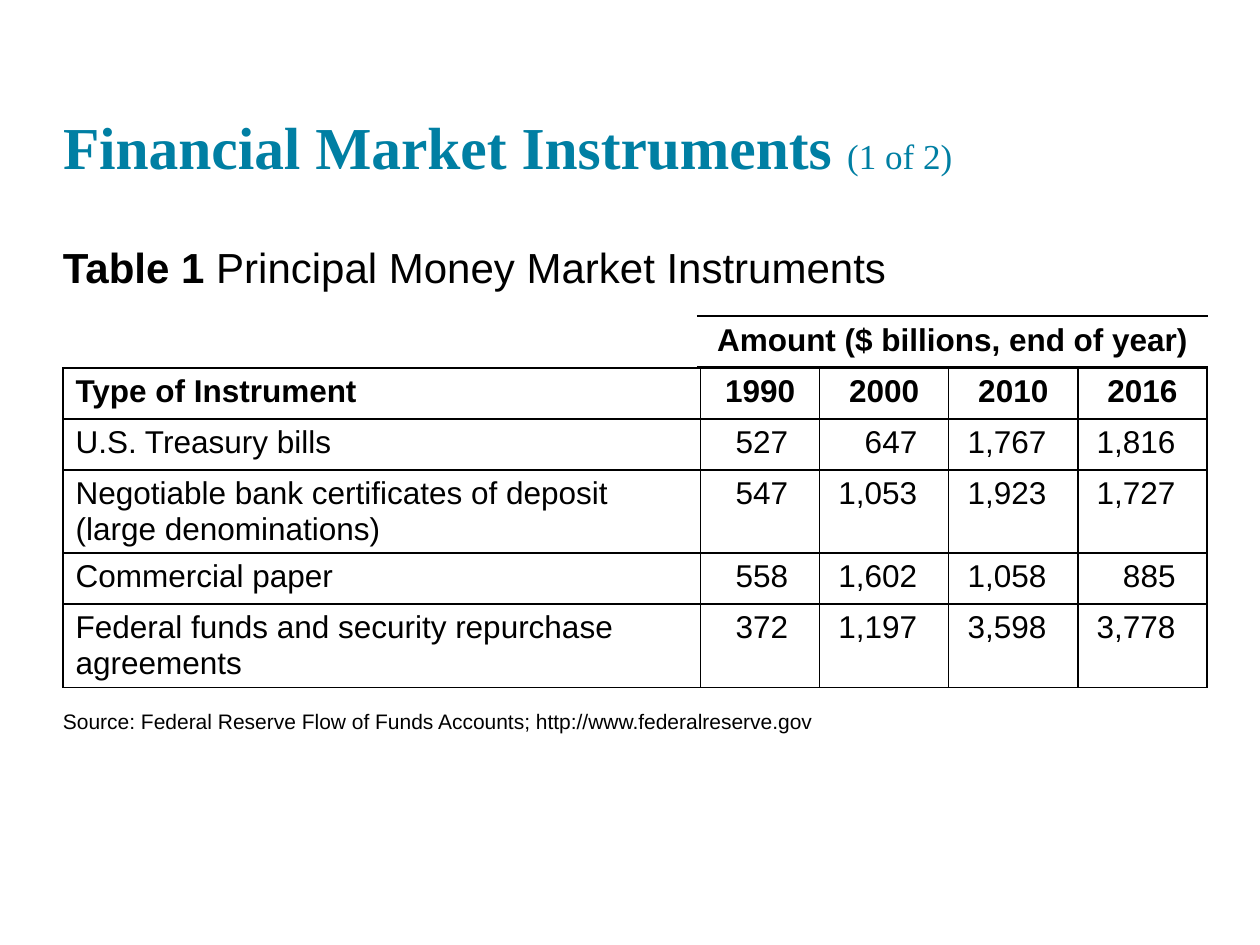
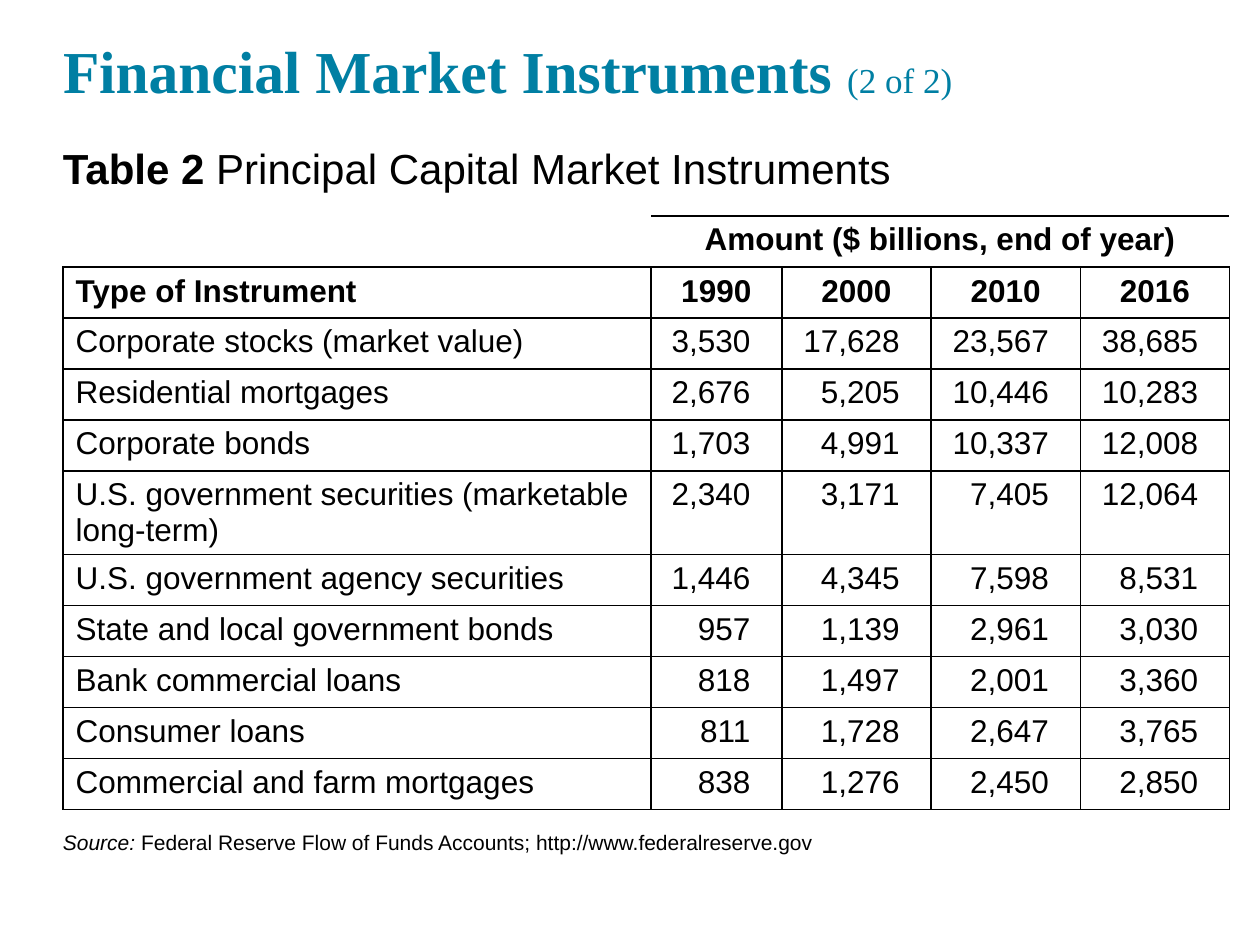
import dataclasses
import pptx
import pptx.util
import pptx.dml.color
import pptx.enum.text
import lxml.etree
import pptx.oxml.ns


@dataclasses.dataclass
class Theme:
    teal: str = "007FA3"
    black: str = "000000"
    serif: str = "Times New Roman"
    sans: str = "Arial"
    title: int = 34
    count: int = 20
    label: int = 24
    cell: int = 18
    source: int = 12


theme = Theme()
PX = 4572
LEFT = 100
WIDE = 1800
ROW = 81
TALL = 132
INSET = 50
ALIGN = pptx.enum.text.PP_ALIGN
YEARS = ["1990", "2000", "2010", "2016"]
SOURCE = " Federal Reserve Flow of Funds Accounts; http://www.federalreserve.gov"

pages = [
    dict(
        title=(48, 240), label=(384, "Table 1", " Principal Money Market Instruments"),
        band=(1106, 502, 812), top=584, cols=[1012, 189, 205, 205, 205],
        tall=[2, 4], source=1124, slant=False,
        rows=[
            ["U.S. Treasury bills", "527", "647", "1,767", "1,816"],
            ["Negotiable bank certificates of deposit (large denominations)",
             "547", "1,053", "1,923", "1,727"],
            ["Commercial paper", "558", "1,602", "1,058", "885"],
            ["Federal funds and security repurchase agreements",
             "372", "1,197", "3,598", "3,778"],
        ],
    ),
    dict(
        title=(48, 120), label=(226, "Table 2", " Principal Capital Market Instruments"),
        band=(1034, 343, 916), top=424, cols=[933, 208, 237, 237, 237],
        tall=[4], source=1317, slant=True,
        rows=[
            ["Corporate stocks (market value)", "3,530", "17,628", "23,567", "38,685"],
            ["Residential mortgages", "2,676", "5,205", "10,446", "10,283"],
            ["Corporate bonds", "1,703", "4,991", "10,337", "12,008"],
            ["U.S. government securities (marketable long-term)",
             "2,340", "3,171", "7,405", "12,064"],
            ["U.S. government agency securities", "1,446", "4,345", "7,598", "8,531"],
            ["State and local government bonds", "957", "1,139", "2,961", "3,030"],
            ["Bank commercial loans", "818", "1,497", "2,001", "3,360"],
            ["Consumer loans", "811", "1,728", "2,647", "3,765"],
            ["Commercial and farm mortgages", "838", "1,276", "2,450", "2,850"],
        ],
    ),
]


def write(shape, box, face, color, parts):
    shape.left, shape.top, shape.width, shape.height = [n * PX for n in box]
    frame = shape.text_frame
    frame.word_wrap = True
    frame.auto_size = pptx.enum.text.MSO_AUTO_SIZE.NONE
    frame.margin_left = frame.margin_right = 0
    frame.margin_top = frame.margin_bottom = 0
    line = frame.paragraphs[0]
    line.alignment = ALIGN.LEFT
    line.font.name = face
    line.font.color.rgb = pptx.dml.color.RGBColor.from_string(color)
    for words, size, bold, slant in parts:
        run = line.add_run()
        run.text = words
        run.font.size = pptx.util.Pt(size)
        run.font.bold = bold
        run.font.italic = slant


def grid(slide, left, top, cols, rows, tall, edges):
    highs = [TALL if n in tall else ROW for n in range(len(rows))]
    table = slide.shapes.add_table(
        len(rows), len(cols), left * PX, top * PX, sum(cols) * PX, sum(highs) * PX
    ).table
    table.first_row = table.horz_banding = False
    for col, width in zip(table.columns, cols):
        col.width = width * PX
    for r, row in enumerate(rows):
        table.rows[r].height = highs[r] * PX
        for c, words in enumerate(row):
            cell = table.cell(r, c)
            cell.text = words
            line = cell.text_frame.paragraphs[0]
            line.font.name = theme.sans
            line.font.size = pptx.util.Pt(theme.cell)
            line.font.bold = r == 0
            line.font.color.rgb = pptx.dml.color.RGBColor.from_string(theme.black)
            if r == 0 and words != "Type of Instrument":
                line.alignment = ALIGN.CENTER
            elif c > 0:
                line.alignment = ALIGN.RIGHT
                cell.margin_right = INSET * PX
            props = cell._tc.get_or_add_tcPr()
            for side in "LRTB":
                edge = lxml.etree.SubElement(
                    props, pptx.oxml.ns.qn("a:ln" + side), w=str(pptx.util.Pt(1))
                )
                if side in edges:
                    fill = lxml.etree.SubElement(edge, pptx.oxml.ns.qn("a:solidFill"))
                    lxml.etree.SubElement(
                        fill, pptx.oxml.ns.qn("a:srgbClr"), val=theme.black
                    )
                else:
                    lxml.etree.SubElement(edge, pptx.oxml.ns.qn("a:noFill"))
            cell.fill.background()


deck = pptx.Presentation()
deck.slide_width = 2000 * PX
deck.slide_height = 1500 * PX

for num, page in enumerate(pages, 1):
    slide = deck.slides.add_slide(deck.slide_layouts[5])
    top, high = page["title"]
    title = slide.shapes.title
    write(title, (LEFT, top, WIDE, high), theme.serif, theme.teal, [
        ("Financial Market Instruments ", theme.title, True, False),
        (f"({num} of {len(pages)})", theme.count, False, False),
    ])
    title.text_frame.vertical_anchor = pptx.enum.text.MSO_ANCHOR.BOTTOM

    top, name, topic = page["label"]
    label = slide.shapes.add_textbox(0, 0, 0, 0)
    write(label, (LEFT, top, WIDE, 84), theme.sans, theme.black, [
        (name, theme.label, True, False),
        (topic, theme.label, False, False),
    ])

    left, top, width = page["band"]
    grid(slide, left, top, [width], [["Amount ($ billions, end of year)"]], [], "TB")
    rows = [["Type of Instrument"] + YEARS] + page["rows"]
    grid(slide, LEFT, page["top"], page["cols"], rows, page["tall"], "LRTB")

    source = slide.shapes.add_textbox(0, 0, 0, 0)
    write(source, (LEFT, page["source"], WIDE, 44), theme.sans, theme.black, [
        ("Source:", theme.source, False, page["slant"]),
        (SOURCE, theme.source, False, False),
    ])

deck.save("out.pptx")
